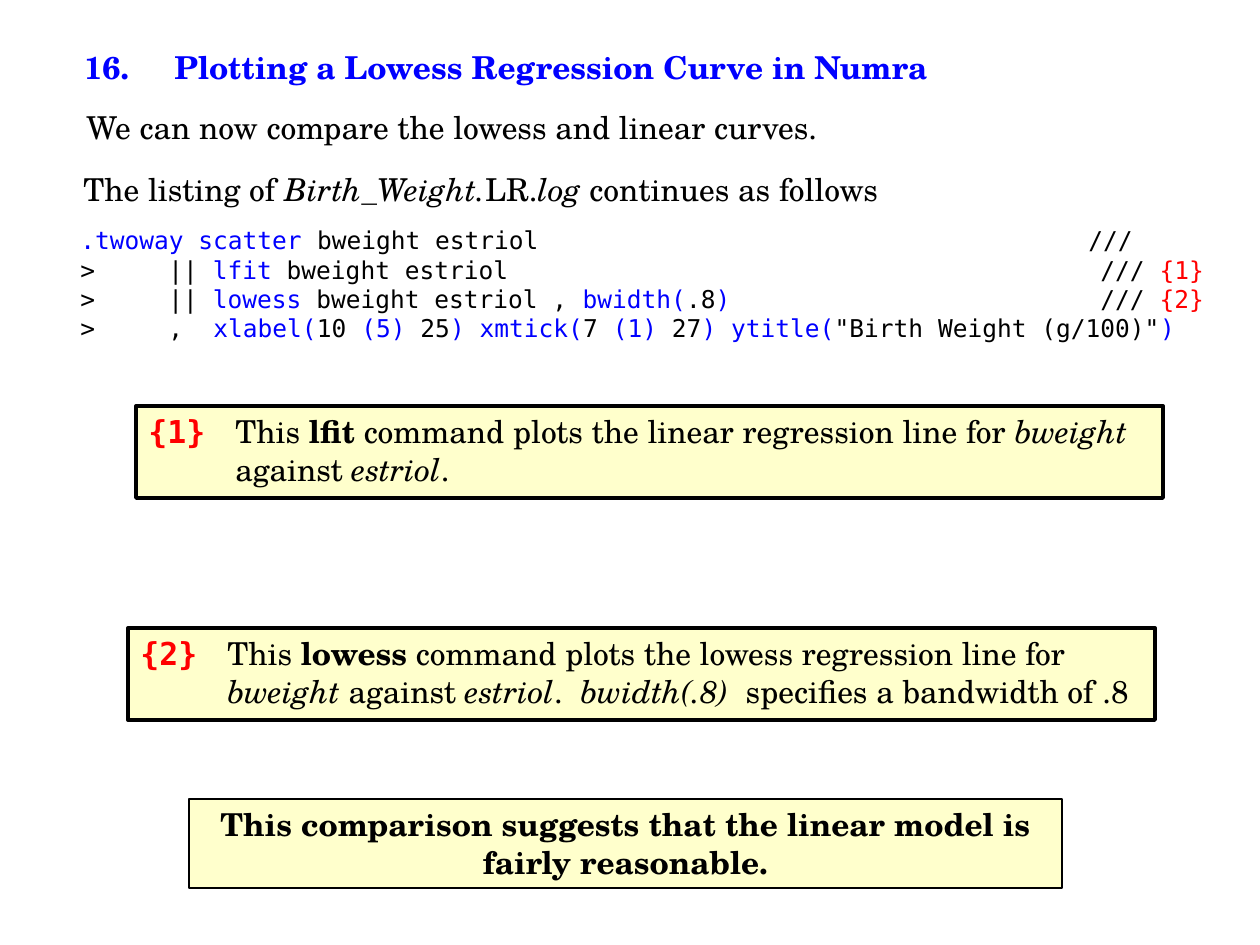
import pptx
import pptx.dml.color
import pptx.enum.shapes
import pptx.enum.text
import pptx.oxml
import pptx.oxml.ns
import pptx.util

PX = 914400 // 126
SERIF, MONO = "TeX Gyre Schola", "DejaVu Sans Mono"
BLACK, BLUE, RED, CREAM = "000000", "0000FF", "FF0000", "FFFFCC"
ALIGN = pptx.enum.text.PP_ALIGN


def color(value):
    return pptx.dml.color.RGBColor.from_string(value)


def add_span(para, text, font=SERIF, size=18, fill=BLACK, bold=False, italic=False):
    span = para.add_run()
    span.text = text
    span.font.name = font
    span.font.size = pptx.util.Pt(size)
    span.font.color.rgb = color(fill)
    span.font.bold = bold
    span.font.italic = italic


def set_tabs(para, stops):
    tabs = pptx.oxml.parse_xml(f"<a:tabLst {pptx.oxml.ns.nsdecls('a')}/>")
    for stop in stops:
        tabs.append(pptx.oxml.parse_xml(
            f'<a:tab {pptx.oxml.ns.nsdecls("a")} pos="{stop * PX}" algn="l"/>'))
    para._p.get_or_add_pPr().append(tabs)


def set_hanging(para, indent):
    properties = para._p.get_or_add_pPr()
    properties.set("marL", str(indent * PX))
    properties.set("indent", str(-indent * PX))


def prepare(frame):
    frame.word_wrap = True
    frame.vertical_anchor = pptx.enum.text.MSO_ANCHOR.TOP
    return frame


def add_text(page, area):
    box = page.shapes.add_textbox(*(length * PX for length in area))
    return prepare(box.text_frame)


def add_panel(page, area, border):
    box = page.shapes.add_shape(
        pptx.enum.shapes.MSO_SHAPE.RECTANGLE, *(length * PX for length in area))
    box.shadow.inherit = False
    box.fill.solid()
    box.fill.fore_color.rgb = color(CREAM)
    box.line.color.rgb = color(BLACK)
    box.line.width = pptx.util.Pt(border)
    return prepare(box.text_frame)


def add_heading(page, area, text):
    para = add_text(page, area).paragraphs[0]
    set_tabs(para, [90])
    add_span(para, text, fill=BLUE, bold=True)


def add_sentence(page, area, spans):
    para = add_text(page, area).paragraphs[0]
    for text, style in spans:
        add_span(para, text, **style)


def add_listing(page, area, lines):
    frame = add_text(page, area)
    for index, (stops, spans) in enumerate(lines):
        para = frame.add_paragraph() if index else frame.paragraphs[0]
        set_tabs(para, stops)
        for text, fill in spans:
            add_span(para, text, font=MONO, size=14, fill=fill)


def add_note(page, area, label, spans):
    para = add_panel(page, area, 2.25).paragraphs[0]
    para.alignment = ALIGN.LEFT
    set_hanging(para, 87)
    add_span(para, label + "\t", font=MONO, fill=RED, bold=True)
    for text, style in spans:
        add_span(para, text, **style)


def add_conclusion(page, area, text):
    para = add_panel(page, area, 0.75).paragraphs[0]
    para.alignment = ALIGN.CENTER
    add_span(para, text, bold=True)


def main():
    deck = pptx.Presentation()
    deck.slide_width = pptx.util.Inches(10)
    deck.slide_height = pptx.util.Inches(7.5)
    page = deck.slides.add_slide(deck.slide_layouts[6])
    plain, bold, italic = {}, {"bold": True}, {"italic": True}

    add_heading(page, (72, 42, 949, 50),
                "16.\tPlotting a Lowess Regression Curve in Numra")
    add_sentence(page, (74, 102, 942, 50), [
        ("We can now compare the lowess and linear curves.", plain)])
    add_sentence(page, (71, 164, 924, 50), [
        ("The listing of ", plain), ("Birth_Weight.", italic), ("LR.", plain),
        ("log", italic), (" continues as follows", plain)])

    add_listing(page, (68, 219, 1189, 130), [
        ([1008], [(".twoway scatter ", BLUE), ("bweight estriol\t///", BLACK)]),
        ([88, 1020], [(">\t|| ", BLACK), ("lfit", BLUE),
                      (" bweight estriol\t/// ", BLACK), ("{1}", RED)]),
        ([88, 1020], [(">\t|| ", BLACK), ("lowess", BLUE),
                      (" bweight estriol , ", BLACK), ("bwidth(", BLUE),
                      (".8", BLACK), (")", BLUE), ("\t/// ", BLACK), ("{2}", RED)]),
        ([88, 133], [(">\t,\t", BLACK), ("xlabel(", BLUE), ("10 ", BLACK),
                     ("(5)", BLUE), (" 25", BLACK), (") xmtick(", BLUE),
                     ("7 ", BLACK), ("(1)", BLUE), (" 27", BLACK),
                     (") ytitle(", BLUE), ('"Birth Weight (g/100)"', BLACK),
                     (")", BLUE)]),
    ])

    add_note(page, (136, 406, 1027, 92), "{1}", [
        ("This ", plain), ("lfit", bold),
        (" command plots the linear regression line for ", plain),
        ("bweight", italic), (" against ", plain), ("estriol", italic), (".", plain)])
    add_note(page, (128, 628, 1027, 92), "{2}", [
        ("This ", plain), ("lowess", bold),
        (" command plots the lowess regression line for ", plain),
        ("bweight", italic), (" against ", plain), ("estriol", italic),
        (".  ", plain), ("bwidth(.8) ", italic),
        (" specifies a bandwidth of .8", plain)])
    add_conclusion(page, (189, 799, 873, 89),
                   "This comparison suggests that the linear model is fairly reasonable.")

    deck.save("out.pptx")


if __name__ == "__main__":
    main()
